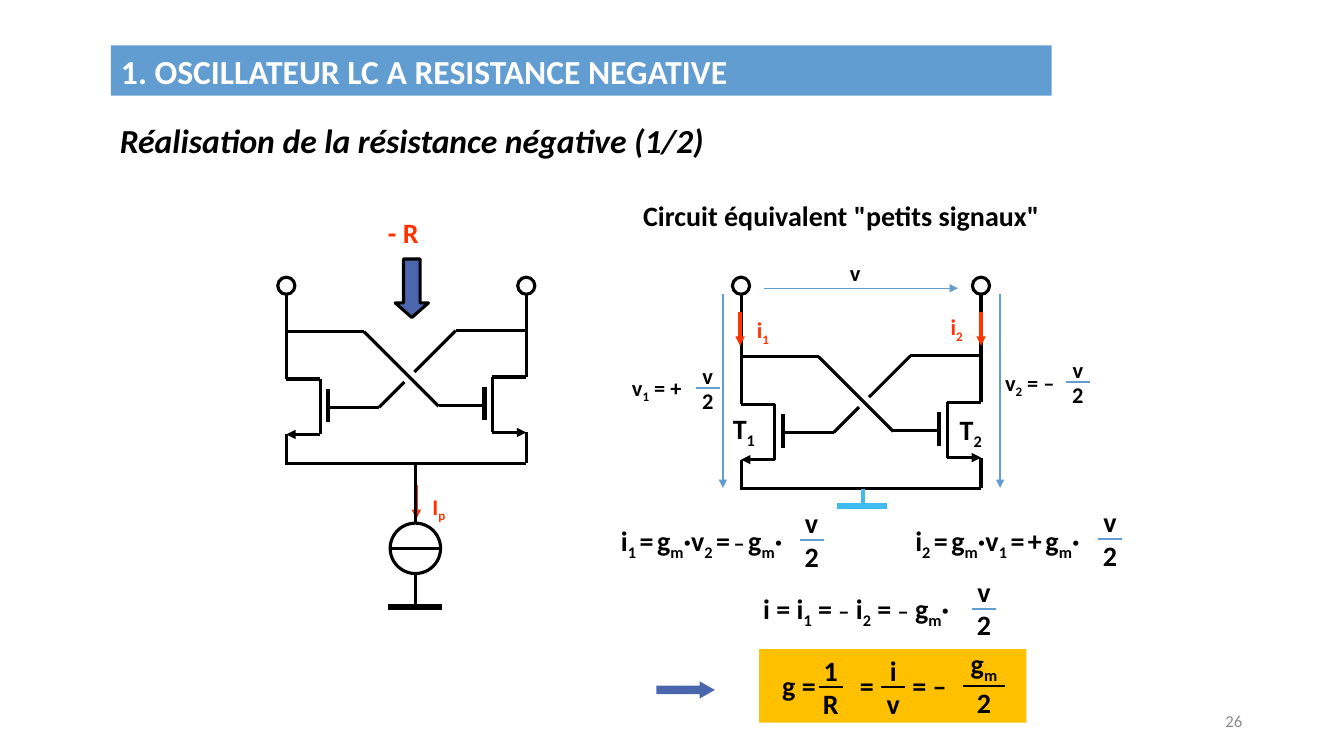
"""Build the slide on the cross-coupled pair that makes a negative resistance."""
from dataclasses import dataclass
from itertools import groupby
from typing import NamedTuple, Optional

from lxml.etree import SubElement
from pptx import Presentation
from pptx.dml.color import RGBColor as RGB
from pptx.enum.shapes import MSO_CONNECTOR as Link, MSO_SHAPE as Form
from pptx.enum.text import MSO_ANCHOR as Anchor, MSO_AUTO_SIZE as Fit, PP_ALIGN as Align
from pptx.oxml.ns import qn
from pptx.util import Inches, Pt


@dataclass(frozen=True)
class Theme:
    font: str = "Calibri"
    ink: str = "000000"
    white: str = "FFFFFF"
    red: str = "FF3300"
    blue: str = "629DD1"
    deep: str = "4A66AC"
    sky: str = "3EBBF0"
    gold: str = "FFC000"
    grey: str = "8C8C8C"
    head: float = 24
    body: float = 20
    small: float = 16
    tiny: float = 12
    gap: float = 11
    wire: float = 2.25
    gate: float = 3
    plate: float = 4.5
    bar: float = 1.5
    thin: float = 1


LOOK = Theme()


class Wire(NamedTuple):
    x1: float
    y1: float
    x2: float
    y2: float
    tint: str = LOOK.ink
    width: float = LOOK.wire
    arrow: bool = False


class Label(NamedTuple):
    text: str
    x: float
    y: float
    w: float
    size: float = LOOK.body
    tint: str = LOOK.ink
    gap: Optional[float] = None
    dash: Optional[float] = None
    bold: bool = True
    slant: bool = False
    align: Align = Align.LEFT


class Ratio(NamedTuple):
    top: str
    low: str
    x: float
    y: float
    size: float = LOOK.body
    tint: str = LOOK.blue
    bar: float = 0.24
    lift: float = 0


class Block(NamedTuple):
    form: Form
    x: float
    y: float
    w: float
    h: float
    fill: str
    edge: Optional[str] = None
    bend: tuple = ()


def write(frame, note: Label) -> None:
    """Fill a text frame run by run; an underscore lowers the next letter."""
    para = frame.paragraphs[0]
    para.alignment, para.line_spacing = note.align, 1.0
    marks = []
    low = False
    for sign in note.text:
        if sign == "_":
            low = True
            continue
        size = {" ": note.gap, "–": note.dash}.get(sign) or note.size
        marks.append((sign, size, low))
        low = False
    for (size, low), group in groupby(marks, key=lambda mark: mark[1:]):
        run = para.add_run()
        run.text = "".join(mark[0] for mark in group)
        font = run.font
        font.name, font.size = LOOK.font, Pt(size)
        font.bold, font.italic = note.bold, note.slant
        font.color.rgb = RGB.from_string(note.tint)
        if low:
            font._element.set("baseline", "-25000")


def draw_label(slide, note: Label) -> None:
    """Place a text box."""
    box = slide.shapes.add_textbox(Inches(note.x), Inches(note.y),
                                   Inches(note.w), Inches(note.size * 0.022))
    box.text_frame.word_wrap = True
    write(box.text_frame, note)


def draw_wire(slide, wire: Wire) -> None:
    """Draw a straight line, with an arrowhead at its end if asked."""
    line = slide.shapes.add_connector(Link.STRAIGHT, *map(Inches, wire[:4]))
    line.line.color.rgb = RGB.from_string(wire.tint)
    line.line.width = Pt(wire.width)
    if wire.arrow:
        SubElement(line.line._get_or_add_ln(), qn("a:tailEnd"), type="triangle")
    SubElement(line._element.spPr, qn("a:effectLst"))


def draw_block(slide, block: Block) -> None:
    """Draw a filled preset shape."""
    shape = slide.shapes.add_shape(block.form, *map(Inches, block[1:5]))
    shape.shadow.inherit = False
    shape.fill.solid()
    shape.fill.fore_color.rgb = RGB.from_string(block.fill)
    for spot, bend in enumerate(block.bend):
        shape.adjustments[spot] = bend
    if block.edge:
        shape.line.color.rgb = RGB.from_string(block.edge)
        shape.line.width = Pt(LOOK.wire)
    else:
        shape.line.fill.background()


def draw_ratio(slide, ratio: Ratio) -> None:
    """Stack two terms around a bar centred on x and y."""
    half, wide = ratio.bar / 2, 0.6
    rise = ratio.size * 0.02 - 0.01
    draw_wire(slide, Wire(ratio.x - half, ratio.y, ratio.x + half, ratio.y, ratio.tint, LOOK.bar))
    for text, y in ((ratio.top, ratio.y - rise - ratio.lift), (ratio.low, ratio.y - 0.06)):
        draw_label(slide, Label(text, ratio.x - wide / 2, y, wide, ratio.size, align=Align.CENTER))


def draw_gate(slide, x: float, y: float, side: int, reach: float) -> None:
    """Draw one transistor that opens to the given side of its outer wire."""
    path = x + side * 0.335
    gate = x + side * 0.415
    for wire in (Wire(x, y, path, y), Wire(path, y, path, y + 0.55),
                 Wire(path, y + 0.55, x, y + 0.55, arrow=True),
                 Wire(x, y + 0.55, x, y + 0.85),
                 Wire(gate, y + 0.1, gate, y + 0.43, width=LOOK.gate),
                 Wire(gate, y + 0.28, x + side * reach, y + 0.28)):
        draw_wire(slide, wire)


def draw_pair(slide, x: float, y: float) -> None:
    """Draw the crossed pair from its left wire x and its drain height y."""
    right, top, dot = x + 2.38, 2.83, 0.17
    draw_gate(slide, x, y, 1, 0.92)
    draw_gate(slide, right, y - 0.02, -1, 0.87)
    for wire in (Wire(x, top, x, y), Wire(right, top, right, y - 0.02),
                 Wire(x, y - 0.47, x + 0.77, y - 0.47),
                 Wire(x + 0.77, y - 0.47, x + 1.51, y + 0.27),
                 Wire(x + 0.92, y + 0.28, x + 1.17, y + 0.03),
                 Wire(x + 1.27, y - 0.07, x + 1.68, y - 0.48),
                 Wire(x + 1.68, y - 0.48, right, y - 0.48),
                 Wire(x, y + 0.84, right, y + 0.84)):
        draw_wire(slide, wire)
    for stem in (x, right):
        draw_block(slide, Block(Form.OVAL, stem - dot / 2, 2.75, dot, dot, LOOK.white, LOOK.ink))


def draw_title(slide, text: str) -> None:
    """Turn the title placeholder into the blue band."""
    title = slide.shapes.title
    title.left, title.top, title.width, title.height = map(Inches, (1.1, 0.45, 9.33, 0.5))
    title.fill.solid()
    title.fill.fore_color.rgb = RGB.from_string(LOOK.blue)
    frame = title.text_frame
    frame.auto_size, frame.vertical_anchor = Fit.NONE, Anchor.TOP
    write(frame, Label(text, 1.1, 0.45, 9.33, LOOK.head, LOOK.white))


SOURCE = [Wire(4.13, 4.81, 4.13, 5.15, LOOK.red, arrow=True), Wire(4.12, 6.02, 4.12, 4.6),
          Wire(3.85, 6.02, 4.38, 6.02, width=LOOK.plate)]
ARROWS = [Wire(x, 3.1, x, 3.43, LOOK.red, arrow=True) for x in (7.34, 9.73)]
ARROWS += [Wire(x, 2.92, x, 4.84, LOOK.blue, LOOK.thin, True) for x in (7.17, 9.92)]
ARROWS += [Wire(7.58, 2.86, 9.5, 2.86, LOOK.blue, LOOK.thin, True),
           Wire(8.3, 5.02, 8.8, 5.02, LOOK.sky, LOOK.plate), Wire(8.56, 4.85, 8.56, 5.03, LOOK.sky)]
BLOCKS = [Block(Form.DOWN_ARROW, 3.92, 2.57, 0.33, 0.58, LOOK.deep, LOOK.ink, (0.5, 0.44)),
          Block(Form.RECTANGLE, 7.53, 6.44, 2.65, 0.73, LOOK.gold),
          Block(Form.RIGHT_ARROW, 6.51, 6.76, 0.58, 0.17, LOOK.deep, None, (0.5, 0.88))]
LABELS = [
    Label("Réalisation de la résistance négative (1/2)", 1.09, 1.14, 6.3, LOOK.head, slant=True),
    Label('Circuit équivalent "petits signaux"', 6.28, 1.92, 4.4),
    Label("- R", 3.75, 2.09, 0.6, tint=LOOK.red),
    Label("I_p", 4.19, 4.84, 0.5, LOOK.small, LOOK.red),
    Label("i_1", 7.41, 3.09, 0.4, LOOK.small, LOOK.red),
    Label("i_2", 9.33, 3.06, 0.4, LOOK.small, LOOK.red),
    Label("v", 8.33, 2.52, 0.4, LOOK.small),
    Label("v_1 = +", 6.17, 3.66, 0.86, LOOK.small),
    Label("v_2 = –", 9.87, 3.61, 0.86, LOOK.small),
    Label("T_1", 7.17, 4.03, 0.61), Label("T_2", 9.42, 4.04, 0.53),
    Label("i_1 = g_m·v_2 = – g_m·", 6.06, 5.14, 2.32, gap=LOOK.gap, dash=LOOK.small),
    Label("i_2 = g_m·v_1 = + g_m·", 8.98, 5.14, 2.44, gap=LOOK.gap),
    Label("i = i_1 = – i_2 = – g_m·", 7.47, 5.82, 2.4, dash=LOOK.small),
    Label("g =", 7.66, 6.58, 0.6), Label("=", 8.43, 6.58, 0.4), Label("= –", 8.95, 6.58, 0.6)]
RATIOS = [Ratio("v", "2", 7.02, 3.85, LOOK.small), Ratio("v", "2", 10.69, 3.79, LOOK.small),
          Ratio("v", "2", 8.05, 5.36), Ratio("v", "2", 11.01, 5.35), Ratio("v", "2", 9.76, 6.04),
          Ratio("1", "R", 8.24, 6.82, tint=LOOK.ink), Ratio("i", "v", 8.86, 6.82, tint=LOOK.ink),
          Ratio("g_m", "2", 9.76, 6.81, tint=LOOK.ink, bar=0.42, lift=0.06)]


def main() -> None:
    """Draw every part and save the deck."""
    deck = Presentation()
    deck.slide_width, deck.slide_height = Inches(13.33), Inches(7.5)
    slide = deck.slides.add_slide(deck.slide_layouts[5])
    draw_title(slide, "1. OSCILLATEUR LC A RESISTANCE NEGATIVE")
    for wire in SOURCE:
        draw_wire(slide, wire)
    draw_block(slide, Block(Form.OVAL, 3.87, 5.19, 0.5, 0.5, LOOK.white, LOOK.ink))
    draw_wire(slide, Wire(3.87, 5.44, 4.37, 5.44))
    for x, y in ((2.84, 3.76), (7.35, 4.01)):
        draw_pair(slide, x, y)
    for items, draw in ((ARROWS, draw_wire), (BLOCKS, draw_block),
                        (LABELS, draw_label), (RATIOS, draw_ratio)):
        for item in items:
            draw(slide, item)
    draw_label(slide, Label("26", 9.42, 7, 3, LOOK.tiny, LOOK.grey, bold=False, align=Align.RIGHT))
    deck.save("out.pptx")


if __name__ == "__main__":
    main()
